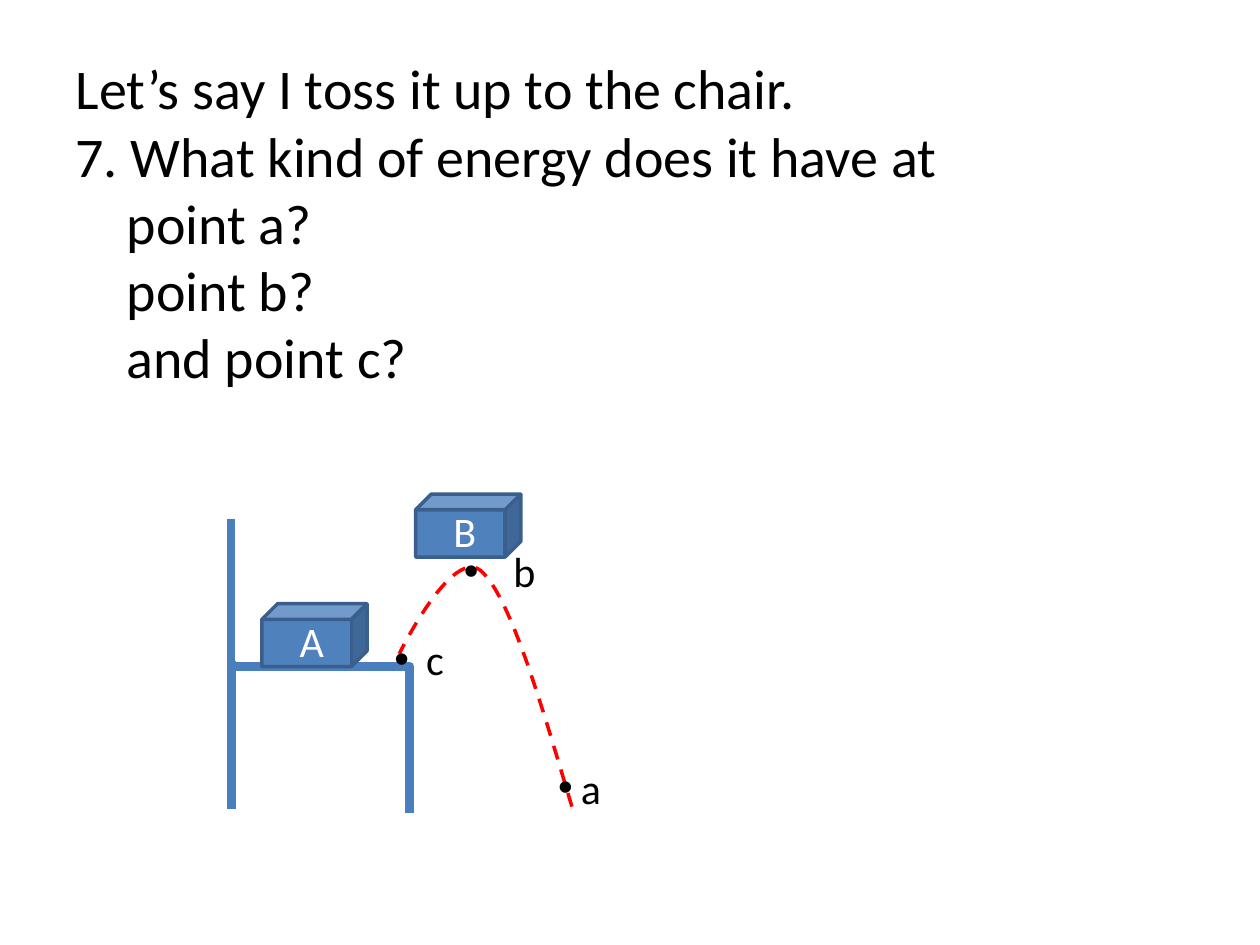
from dataclasses import dataclass

from lxml.etree import SubElement
from pptx import Presentation
from pptx.dml.color import RGBColor
from pptx.enum.dml import MSO_LINE
from pptx.enum.shapes import MSO_CONNECTOR, MSO_SHAPE
from pptx.enum.text import MSO_ANCHOR, MSO_AUTO_SIZE, PP_ALIGN
from pptx.oxml.ns import qn
from pptx.util import Cm, Pt

BLACK = RGBColor(0x00, 0x00, 0x00)
WHITE = RGBColor(0xFF, 0xFF, 0xFF)
RED = RGBColor(0xFF, 0x00, 0x00)
CHAIR_BLUE = RGBColor(0x4B, 0x7E, 0xBC)
CUBE_FILL = RGBColor(0x4F, 0x81, 0xBD)
CUBE_LINE = RGBColor(0x3A, 0x5F, 0x8C)
FONT = "Calibri"
CURVE_STEPS = 24


@dataclass
class Block:
    """A cube with its letter; lengths in centimetres."""
    letter: str
    left: float
    top: float


@dataclass
class PointLabel:
    """A bullet dot on the path with its letter at a given indent."""
    letter: str
    left: float
    top: float
    indent: float


QUESTION = [  # line, left indent in cm
    ("Let’s say I toss it up to the chair.", 0),
    ("7. What kind of energy does it have at", 0),
    ("point a?", 1.03),
    ("point b?", 1.03),
    ("and point c?", 1.03),
]
BLOCKS = [Block("B", 8.38, 9.96), Block("A", 5.28, 12.17)]
LABELS = [
    PointLabel("a", 11.0, 15.24, 0.46),
    PointLabel("b", 9.1, 10.87, 1.0),
    PointLabel("c", 7.7, 12.65, 0.64),
]
# Bezier segments of the toss: start, two controls, end
TOSS = [
    ((11.53, 16.26), (10.9, 14.15), (10.29, 12.04), (9.7, 11.51)),
    ((9.7, 11.51), (9.12, 11.0), (8.05, 13.18), (8.05, 13.18)),
]


def add_span(para, text: str, size: float, color: RGBColor) -> None:
    span = para.add_run()
    span.text = text
    span.font.name = FONT
    span.font.size = Pt(size)
    span.font.color.rgb = color


def set_indent(para, left: float, first: float) -> None:
    properties = para._p.get_or_add_pPr()
    properties.set("marL", str(Cm(left)))
    properties.set("indent", str(Cm(first)))


def add_letter(shapes, letter: str, left: float, top: float, width: float,
               color: RGBColor):
    box = shapes.add_textbox(Cm(left), Cm(top), Cm(width), Cm(1.27))
    box.text_frame.word_wrap = True
    para = box.text_frame.paragraphs[0]
    add_span(para, letter, 24, color)
    return para


def style_chair(connector) -> None:
    connector.line.color.rgb = CHAIR_BLUE
    connector.line.width = Pt(5)
    SubElement(connector._element.spPr, qn("a:effectLst"))


def add_chair(shapes, left: float, top: float, right: float, bottom: float) -> None:
    # Back, seat and front leg: an elbow turned a quarter so it starts downwards
    middle_x, middle_y = (left + right) / 2, (top + bottom) / 2
    half_length, half_depth = (bottom - top) / 2, (right - left) / 2
    elbow = shapes.add_connector(
        MSO_CONNECTOR.ELBOW,
        Cm(middle_x + half_length), Cm(middle_y - half_depth),
        Cm(middle_x - half_length), Cm(middle_y + half_depth))
    elbow._element.spPr.find(qn("a:xfrm")).set("rot", str(270 * 60000))
    style_chair(elbow)
    # Rear leg
    leg = shapes.add_connector(MSO_CONNECTOR.STRAIGHT, Cm(left), Cm(middle_y - 0.1),
                               Cm(left), Cm(bottom - 0.1))
    style_chair(leg)


def add_block(shapes, block: Block) -> None:
    cube = shapes.add_shape(MSO_SHAPE.CUBE, Cm(block.left), Cm(block.top),
                            Cm(2.12), Cm(1.27))
    cube.shadow.inherit = False
    cube.fill.solid()
    cube.fill.fore_color.rgb = CUBE_FILL
    cube.line.color.rgb = CUBE_LINE
    cube.line.width = Pt(2)
    add_letter(shapes, block.letter, block.left + 0.51, block.top + 0.11, 1.9, WHITE)


def bezier_point(segment, t: float) -> tuple[int, int]:
    weights = ((1 - t) ** 3, 3 * t * (1 - t) ** 2, 3 * t ** 2 * (1 - t), t ** 3)
    x, y = (sum(w * point[axis] for w, point in zip(weights, segment))
            for axis in (0, 1))
    return Cm(x), Cm(y)


def add_toss(shapes) -> None:
    points = [bezier_point(segment, step / CURVE_STEPS)
              for segment in TOSS for step in range(1, CURVE_STEPS + 1)]
    builder = shapes.build_freeform(*bezier_point(TOSS[0], 0))
    builder.add_line_segments(points, close=False)
    path = builder.convert_to_shape()
    path.shadow.inherit = False
    path.fill.background()
    path.line.color.rgb = RED
    path.line.width = Pt(2)
    path.line.dash_style = MSO_LINE.DASH


def add_point_label(shapes, label: PointLabel) -> None:
    para = add_letter(shapes, label.letter, label.left, label.top, 2.54, BLACK)
    set_indent(para, label.indent, -label.indent)
    properties = para._p.get_or_add_pPr()
    SubElement(properties, qn("a:buFont")).set("typeface", "Arial")
    SubElement(properties, qn("a:buChar")).set("char", "•")


def add_question(page) -> None:
    title = page.shapes.title
    title.left, title.top = Cm(1.27), Cm(0.85)
    title.width, title.height = Cm(22.86), Cm(7.25)
    frame = title.text_frame
    frame.word_wrap = True
    frame.auto_size = MSO_AUTO_SIZE.NONE
    frame.vertical_anchor = MSO_ANCHOR.MIDDLE
    for index, (line, indent) in enumerate(QUESTION):
        para = frame.add_paragraph() if index else frame.paragraphs[0]
        para.alignment = PP_ALIGN.LEFT
        set_indent(para, indent, 0)
        add_span(para, line, 32, BLACK)


def main() -> None:
    deck = Presentation()
    deck.slide_width, deck.slide_height = Cm(25.4), Cm(19.05)
    page = deck.slides.add_slide(deck.slide_layouts[5])
    add_question(page)

    # Drawing of the toss
    drawing = page.shapes.add_group_shape().shapes
    add_chair(drawing, 4.66, 10.46, 8.26, 16.4)
    for block in BLOCKS:
        add_block(drawing, block)
    add_toss(drawing)
    for label in LABELS:
        add_point_label(drawing, label)

    deck.save("out.pptx")


if __name__ == "__main__":
    main()
